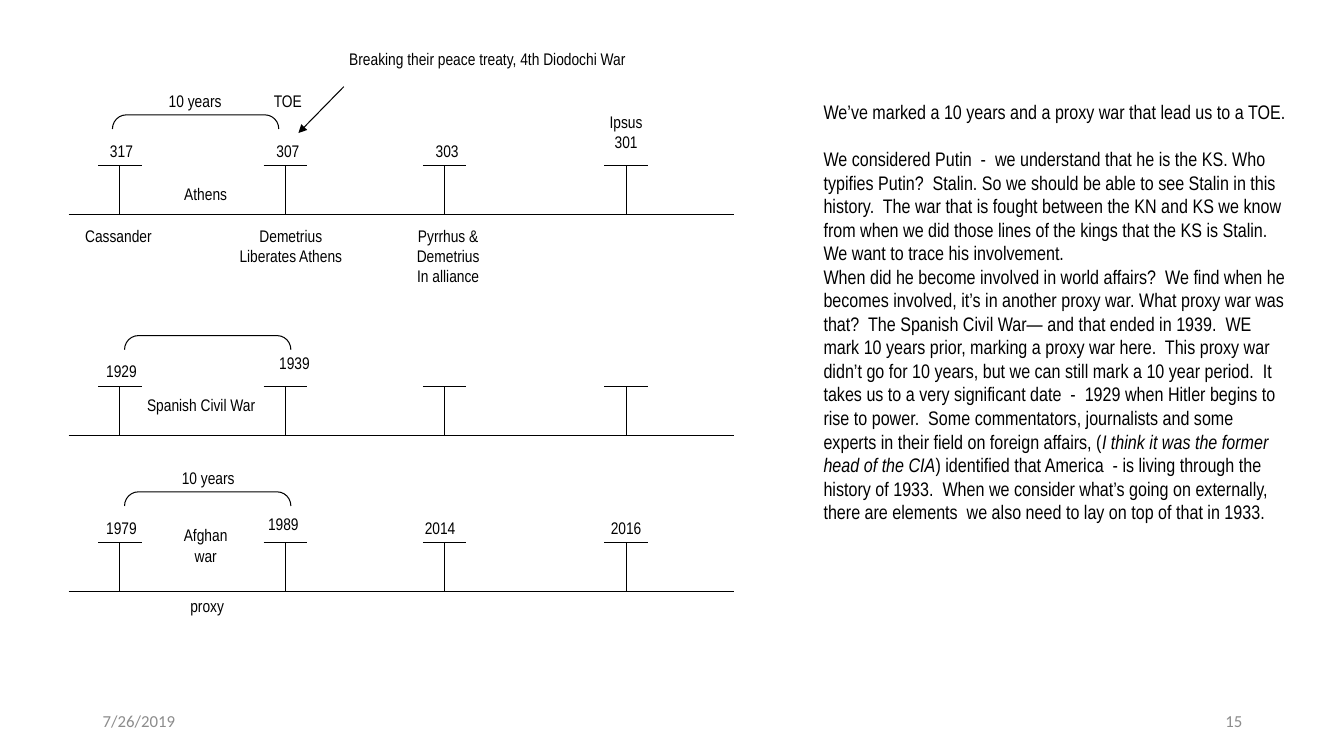
from pptx import Presentation
from pptx.util import Inches, Pt
from pptx.dml.color import RGBColor
from pptx.enum.shapes import MSO_CONNECTOR, MSO_SHAPE
from pptx.enum.text import MSO_ANCHOR, PP_ALIGN
from lxml import etree

LEFT, CENTER, RIGHT = PP_ALIGN.LEFT, PP_ALIGN.CENTER, PP_ALIGN.RIGHT
TOP, MIDDLE = MSO_ANCHOR.TOP, MSO_ANCHOR.MIDDLE
COLORS = {"ink": "000000", "footer": "8C8C8C"}
NS = "http://schemas.openxmlformats.org/drawingml/2006/main"

prs = Presentation()
prs.slide_width, prs.slide_height = Inches(13.33), Inches(7.5)
s = prs.slides.add_slide(prs.slide_layouts[6])


def add_text(x, y, w, h, text, size=12, font="Arial Narrow", color="ink",
             align=CENTER, anchor=TOP, inset=(0.04, 0.04)):
    tf = s.shapes.add_textbox(Inches(x), Inches(y), Inches(w), Inches(h)).text_frame
    tf.word_wrap = True
    tf.vertical_anchor = anchor
    tf.margin_left = tf.margin_right = Inches(inset[0])
    tf.margin_top = tf.margin_bottom = Inches(inset[1])
    tf.text = text
    for p in tf.paragraphs:
        p.alignment = align
        for r in p.runs:
            r.font.size, r.font.name = Pt(size), font
            r.font.color.rgb = RGBColor.from_string(COLORS[color])
    return tf


def add_line(x1, y1, x2, y2):
    line = s.shapes.add_connector(MSO_CONNECTOR.STRAIGHT, Inches(x1), Inches(y1),
                                  Inches(x2), Inches(y2))
    line.line.width = Pt(0.75)
    line.line.color.rgb = RGBColor.from_string(COLORS["ink"])
    etree.SubElement(line._element.spPr, f"{{{NS}}}effectLst")
    return line


# Footer: date and slide number
for x, text, align in [(0.92, "7/26/2019", LEFT), (9.42, "15", RIGHT)]:
    add_text(x, 6.95, 3, 0.4, text, font="Calibri", color="footer", align=align,
             anchor=MIDDLE, inset=(0.1, 0.05))

# Commentary on the right
commentary = [
    "We’ve marked a 10 years and a proxy war that lead us to a TOE.",
    "We considered Putin  -  we understand that he is the KS. Who typifies Putin?  "
    "Stalin. So we should be able to see Stalin in this history.  The war that is "
    "fought between the KN and KS we know from when we did those lines of the kings "
    "that the KS is Stalin.  We want to trace his involvement.",
    "When did he become involved in world affairs?  We find when he becomes involved, "
    "it’s in another proxy war. What proxy war was that?  The Spanish Civil War— and "
    "that ended in 1939.  WE mark 10 years prior, marking a proxy war here.  This proxy "
    "war didn’t go for 10 years, but we can still mark a 10 year period.  It takes us to "
    "a very significant date  -  1929 when Hitler begins to rise to power.  Some "
    "commentators, journalists and some experts in their field on foreign affairs, (",
]
tf = add_text(8.07, 0.94, 4.8, 4.54, "\n".join(commentary), size=14, align=LEFT,
              inset=(0.1, 0.05))
tf.paragraphs[0].space_after = Pt(17)
for text, italic in [
    ("I think it was the former head of the CIA", True),
    (") identified that America  - is living through the history of 1933.  When we "
     "consider what’s going on externally, there are elements  we also need to lay on "
     "top of that in 1933.", False),
]:
    r = tf.paragraphs[-1].add_run()
    r.text = text
    r.font.size, r.font.name, r.font.italic = Pt(14), "Arial Narrow", italic
    r.font.color.rgb = RGBColor.from_string(COLORS["ink"])

# Three timelines: base line, four T-shaped markers and a ten-year bracket
BRACKET_W, BRACKET_H = 0.14, 1.65
for base, bracket_x, bracket_y in [(2.13, 1.94, 1.21), (4.32, 2.06, 3.4), (5.87, 2.06, 4.95)]:
    add_line(0.68, base, 7.28, base)
    cap = base - 0.49
    for x in (1.19, 2.83, 4.41, 6.21):
        add_line(x, cap, x, base)
        add_line(x - 0.215, cap, x + 0.215, cap)
    bracket = s.shapes.add_shape(
        MSO_SHAPE.LEFT_BRACKET, Inches(bracket_x - BRACKET_W / 2),
        Inches(bracket_y - BRACKET_H / 2), Inches(BRACKET_W), Inches(BRACKET_H))
    bracket.rotation = 90
    bracket.adjustments[0] = 0.97
    bracket.shadow.inherit = False
    bracket.fill.background()
    bracket.line.width = Pt(0.75)
    bracket.line.color.rgb = RGBColor.from_string(COLORS["ink"])

# Arrow from the treaty note to 307
arrow = add_line(3.41, 0.86, 2.96, 1.32)
etree.SubElement(arrow.line._get_or_add_ln(), f"{{{NS}}}tailEnd", type="triangle")

# Timeline labels: left, top, width, height, text
labels = [
    # Diadochi wars
    (2.96, 0.44, 3.75, 0.32, "Breaking their peace treaty, 4th Diodochi War"),
    (1.54, 0.86, 0.79, 0.32, "10 years"),
    (2.62, 0.86, 0.47, 0.32, "TOE"),
    (0.97, 1.36, 0.47, 0.32, "317"),
    (2.62, 1.36, 0.47, 0.32, "307"),
    (4.2, 1.36, 0.47, 0.32, "303"),
    (5.78, 1.07, 0.86, 0.6, "Ipsus\n301"),
    (1.54, 1.78, 1, 0.32, "Athens"),
    (0.68, 2.2, 0.99, 0.32, "Cassander"),
    (2.2, 2.2, 1.37, 0.56, "Demetrius\nLiberates Athens"),
    (3.87, 2.2, 1.15, 0.78, "Pyrrhus & Demetrius\nIn alliance"),
    # Spanish Civil War
    (0.97, 3.54, 0.47, 0.32, "1929"),
    (2.58, 3.46, 0.68, 0.33, "1939"),
    (1.34, 3.88, 1.31, 0.38, "Spanish Civil War"),
    # Afghan war
    (1.67, 4.6, 0.79, 0.32, "10 years"),
    (0.97, 5.1, 0.47, 0.32, "1979"),
    (2.47, 5.06, 0.68, 0.29, "1989"),
    (4.06, 5.1, 0.61, 0.32, "2014"),
    (5.78, 5.1, 0.86, 0.32, "2016"),
    (1.54, 5.17, 1, 0.67, "Afghan\nwar"),
    (1.48, 5.87, 1.15, 0.39, "proxy"),
]
for x, y, w, h, text in labels:
    add_text(x, y, w, h, text)

prs.save("out.pptx")
